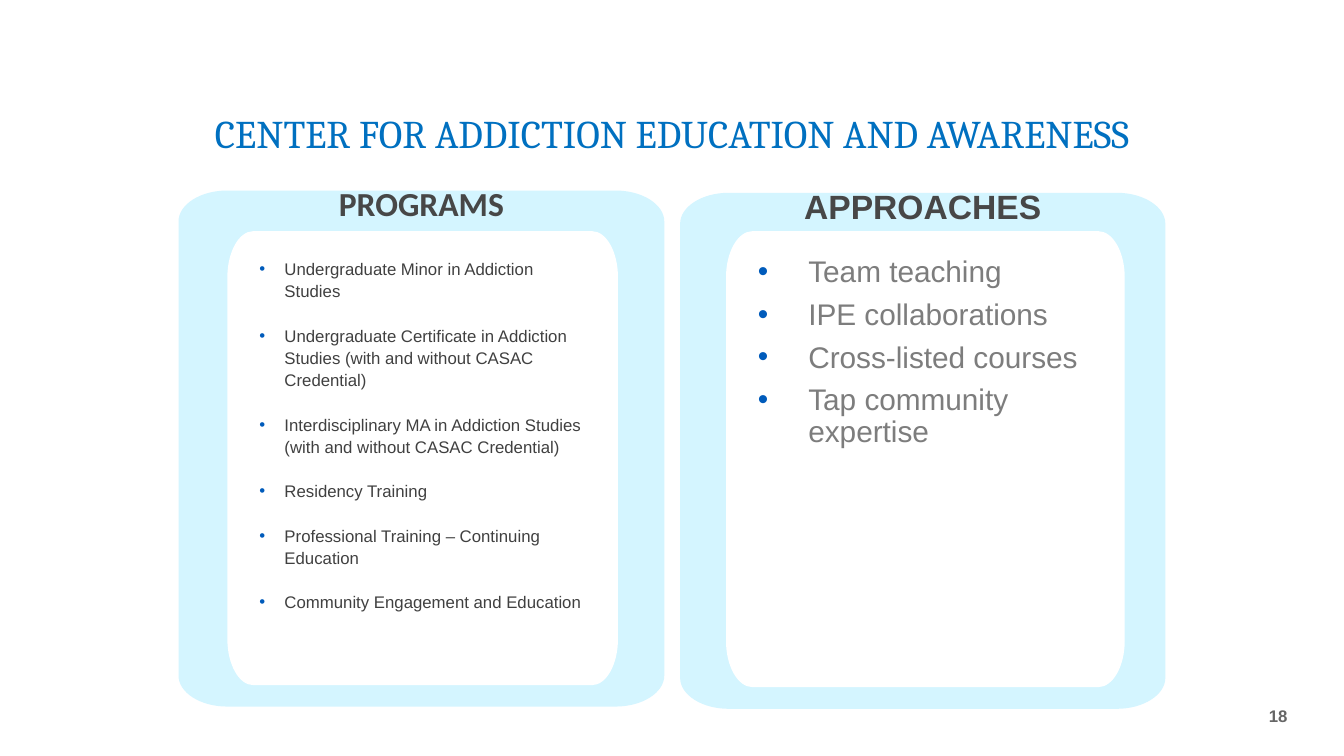
from collections import namedtuple
from dataclasses import dataclass

from lxml import etree
from pptx import Presentation
from pptx.dml.color import RGBColor
from pptx.enum.text import MSO_ANCHOR, PP_ALIGN
from pptx.oxml.ns import qn
from pptx.util import Pt

TOP, MIDDLE = MSO_ANCHOR.TOP, MSO_ANCHOR.MIDDLE
LEFT, CENTER, RIGHT = PP_ALIGN.LEFT, PP_ALIGN.CENTER, PP_ALIGN.RIGHT
CURVE = 0.55

Box = namedtuple("Box", "left top width height")
Margins = namedtuple("Margins", "side top bottom")
Style = namedtuple("Style", "font size color bold")
ListFormat = namedtuple("ListFormat", "style indent line_spacing before after")


@dataclass(frozen=True)
class Theme:
    """Colours and type styles of the slide."""
    panel: str = "D4F5FF"
    card: str = "FFFFFF"
    bullet: str = "005BBB"
    title: Style = Style("Cambria", 28, "0070C0", False)
    programs: Style = Style("Calibri", 24, "474747", True)
    approaches: Style = Style("Arial", 24, "474747", True)
    program_item: Style = Style("Arial", 12, "404040", False)
    approach_item: Style = Style("Arial", 21.3, "7D7D7D", False)
    number: Style = Style("Arial", 12, "666666", True)


THEME = Theme()
PROGRAM_LIST = ListFormat(THEME.program_item, 18, 1.1, 15.9, 0)
APPROACH_LIST = ListFormat(THEME.approach_item, 36, 0.9, 0, 7.45)
PROGRAMS = [
    "Undergraduate Minor in Addiction Studies",
    "Undergraduate Certificate in Addiction Studies (with and without CASAC Credential)",
    "Interdisciplinary MA in Addiction Studies (with and without CASAC Credential)",
    "Residency Training",
    "Professional Training – Continuing Education",
    "Community Engagement and Education",
]
APPROACHES = [
    "Team teaching",
    "IPE collaborations",
    "Cross-listed courses",
    "Tap community expertise",
]


def write(shape, lines, style, align, anchor, margins, spacing):
    """Fill a shape with uniformly styled paragraphs."""
    frame = shape.text_frame
    frame.word_wrap = True
    frame.vertical_anchor = anchor
    frame.margin_left = frame.margin_right = Pt(margins.side)
    frame.margin_top, frame.margin_bottom = Pt(margins.top), Pt(margins.bottom)
    frame.text = "\n".join(lines)
    for para in frame.paragraphs:
        para.alignment = align
        para.line_spacing = spacing
        for span in para.runs:
            span.font.name = style.font
            span.font.size = Pt(style.size)
            span.font.bold = style.bold
            span.font.color.rgb = RGBColor.from_string(style.color)


def add_bullet(para, indent):
    """Give a paragraph a coloured bullet and a hanging indent."""
    properties = para._p.get_or_add_pPr()
    properties.set("marL", str(Pt(indent)))
    properties.set("indent", str(-Pt(indent)))
    color = etree.SubElement(properties, qn("a:buClr"))
    etree.SubElement(color, qn("a:srgbClr")).set("val", THEME.bullet)
    etree.SubElement(properties, qn("a:buFont")).set("typeface", "Arial")
    etree.SubElement(properties, qn("a:buChar")).set("char", "•")


def add_text(page, box, text, style, align, anchor, margins, spacing):
    """Place a single line of text in a box."""
    holder = page.shapes.add_textbox(*map(Pt, box))
    write(holder, [text], style, align, anchor, margins, spacing)


def round_corners(shape):
    """Turn the four cut corners of an octagon into elliptical curves."""
    points = list(shape._element.iter(qn("a:pt")))
    width, height = shape.width, shape.height
    corners = [(0, 0), (width, 0), (width, height), (0, height)]
    for corner, start, end in zip(corners, points[::2], points[1::2]):
        segment = end.getparent()
        curve = etree.Element(qn("a:cubicBezTo"))
        for point in (start, end):
            control = etree.SubElement(curve, qn("a:pt"))
            for axis, target in zip("xy", corner):
                value = int(point.get(axis))
                control.set(axis, str(round(value + CURVE * (target - value))))
        segment.getparent().replace(segment, curve)
        curve.append(end)


def add_soft_rectangle(page, box, corner, color):
    """Draw a rectangle with elliptical corners, sized as fractions of the box."""
    left, top = box.left, box.top
    right, bottom = left + box.width, top + box.height
    radius_x, radius_y = box.width * corner[0], box.height * corner[1]
    outline = [
        (left, top + radius_y), (left + radius_x, top),
        (right - radius_x, top), (right, top + radius_y),
        (right, bottom - radius_y), (right - radius_x, bottom),
        (left + radius_x, bottom), (left, bottom - radius_y),
    ]
    points = [(Pt(x), Pt(y)) for x, y in outline]
    builder = page.shapes.build_freeform(*points[0])
    builder.add_line_segments(points[1:], close=True)
    shape = builder.convert_to_shape()
    round_corners(shape)
    shape.shadow.inherit = False
    shape.fill.solid()
    shape.fill.fore_color.rgb = RGBColor.from_string(color)
    shape.line.fill.background()
    return shape


def add_panel(page, box, inset, card_size, heading, style, margins, items, layout):
    """Draw a headed panel with a white card that holds a bulleted list."""
    panel = add_soft_rectangle(page, box, (0.1, 0.06), THEME.panel)
    write(panel, [heading], style, CENTER, TOP, margins, 0.9)
    card_box = Box(box.left + inset[0], box.top + inset[1], *card_size)
    card = add_soft_rectangle(page, card_box, (0.065, 0.1), THEME.card)
    card.line.color.rgb = RGBColor.from_string(THEME.card)
    card.line.width = Pt(1)
    write(card, items, layout.style, LEFT, TOP, Margins(22.3, 18, 18),
          layout.line_spacing)
    for index, para in enumerate(card.text_frame.paragraphs):
        add_bullet(para, layout.indent)
        para.space_before = Pt(layout.before if index else 0)
        para.space_after = Pt(layout.after)


def build_slide(page, box):
    """Lay out the title, the two panels and the page number."""
    add_text(page, Box(box.left, box.top + 72.5, box.width, 60),
             "CENTER FOR ADDICTION EDUCATION AND AWARENESS",
             THEME.title, CENTER, TOP, Margins(9.4, 9.4, 9.4), 0.9)
    add_panel(page, Box(box.left + 127.5, box.top + 136.1, 347, 368.6),
              (35.4, 29.5), (278, 323.3), "PROGRAMS", THEME.programs,
              Margins(11.5, 11.5, 383.8), PROGRAMS, PROGRAM_LIST)
    add_panel(page, Box(box.left + 485.8, box.top + 137.7, 346.6, 368.6),
              (33.3, 27.9), (283.8, 324.7), "APPROACHES", THEME.approaches,
              Margins(19.4, 19.4, 391.7), APPROACHES, APPROACH_LIST)
    add_text(page, Box(box.left + 869.8, box.top + 490.2, 56.9, 41.8),
             "18", THEME.number, RIGHT, MIDDLE, Margins(7.2, 3.6, 3.6), 1.0)


def main():
    """Create and save the deck."""
    deck = Presentation()
    deck.slide_width, deck.slide_height = Pt(960), Pt(540)
    page = deck.slides.add_slide(deck.slide_layouts[6])
    build_slide(page, Box(0, 0, 960, 540))
    deck.save("out.pptx")


if __name__ == "__main__":
    main()
